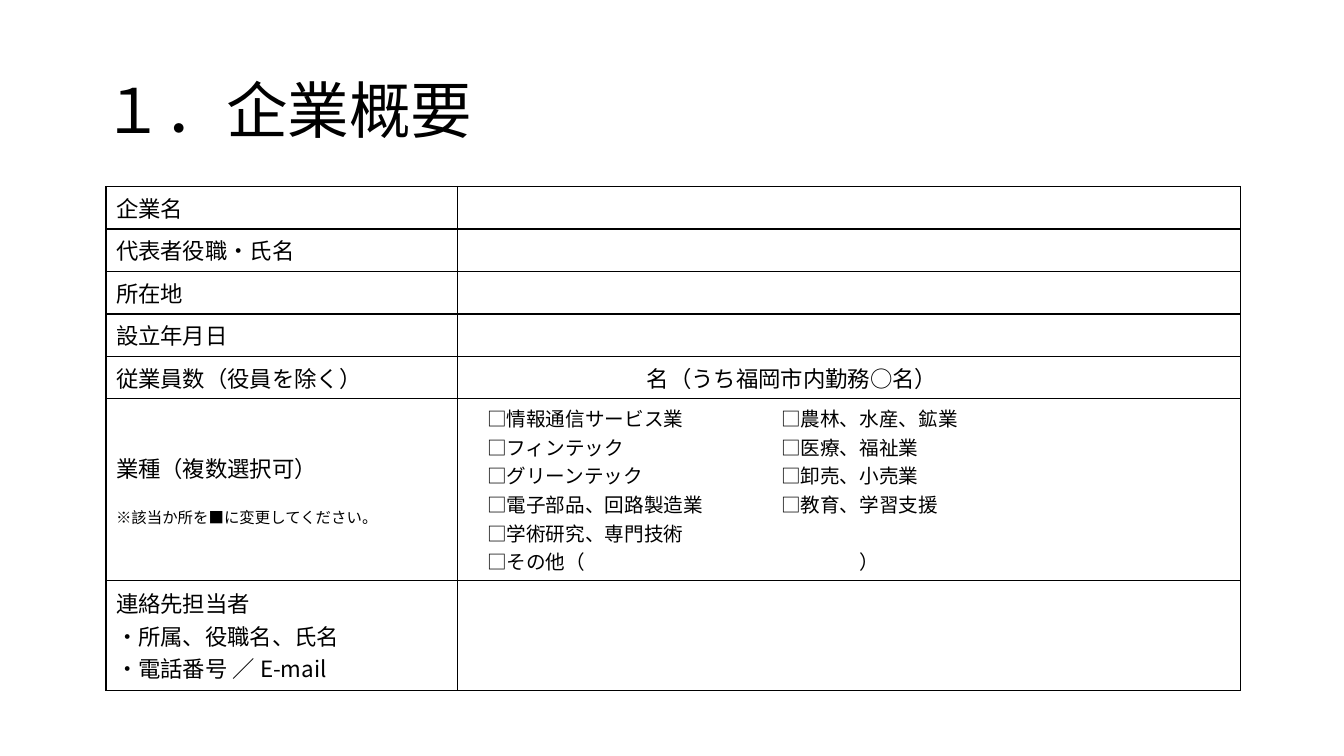
import pptx
import pptx.util
import pptx.dml.color
import pptx.enum.text
import pptx.oxml.ns
import lxml.etree

Cm, Pt = pptx.util.Cm, pptx.util.Pt
RGB = pptx.dml.color.RGBColor
ALIGN, ANCHOR = pptx.enum.text.PP_ALIGN, pptx.enum.text.MSO_ANCHOR
qn = pptx.oxml.ns.qn
sub = lxml.etree.SubElement

COLORS = {"text": "000000", "border": "000000"}
FONT = "Noto Sans CJK JP"


def write(frame, text, size=16, tabs=(), note=None, lead=None):
    """Fill a frame line by line; note is the size of every line after the first."""
    for i, line in enumerate(text.split("\n")):
        par = frame.paragraphs[0] if i == 0 else frame.add_paragraph()
        par.alignment = ALIGN.LEFT
        if lead:
            par.line_spacing = lead
        if note and i:
            par.space_before = Pt(16)
        if tabs:
            stops = sub(par._p.get_or_add_pPr(), qn("a:tabLst"))
            for pos in tabs:
                sub(stops, qn("a:tab"), pos=str(Cm(pos)), algn="l")
        if not line:
            par._p.get_or_add_endParaRPr().set("sz", str(size * 100))
            continue
        run = par.add_run()
        run.text = line
        run.font.size = Pt(note if note and i else size)
        run.font.name = FONT
        run.font.color.rgb = RGB.from_string(COLORS["text"])
        sub(run._r.get_or_add_rPr(), qn("a:ea"), typeface=FONT)


def edge(cell):
    """Draw all four borders of a cell."""
    props = cell._tc.get_or_add_tcPr()
    for side in ("lnL", "lnR", "lnT", "lnB"):
        line = sub(props, qn(f"a:{side}"), w=str(Pt(1)))
        fill = sub(line, qn("a:solidFill"))
        sub(fill, qn("a:srgbClr"), val=COLORS["border"])


deck = pptx.Presentation()
deck.slide_width, deck.slide_height = Cm(33.87), Cm(19.05)
slide = deck.slides.add_slide(deck.slide_layouts[5])

# Title
title = slide.shapes.title
title.left, title.top, title.width, title.height = Cm(2.34), Cm(1.02), Cm(29.21), Cm(3.68)
title.text_frame.vertical_anchor = ANCHOR.MIDDLE
write(title.text_frame, "１．企業概要", size=44, lead=0.9)

# Company table: height, label, label format, entry, entry format
fields = "\n".join([
    "\t□情報通信サービス業\t□農林、水産、鉱業",
    "\t□フィンテック\t□医療、福祉業",
    "\t□グリーンテック\t□卸売、小売業",
    "\t□電子部品、回路製造業\t□教育、学習支援",
    "\t□学術研究、専門技術",
])
other = "\n\t□その他（\t\t）"
rows = [(1.07, name, {}, "", {}) for name in ("企業名", "代表者役職・氏名", "所在地", "設立年月日")]
rows += [
    (1.07, "従業員数（役員を除く）", {}, "\t名（うち福岡市内勤務○名）", {"tabs": [4.52]}),
    (4.57, "業種（複数選択可）\n※該当か所を■に変更してください。", {"note": 11},
     fields + other, {"size": 14, "tabs": [0.49, 7.9, 9.88]}),
    (2.77, "連絡先担当者\n・所属、役職名、氏名\n・電話番号 ／ E-mail", {}, "", {}),
]
widths = [8.86, 19.74]
total = sum(row[0] for row in rows)
table = slide.shapes.add_table(len(rows), 2, Cm(2.67), Cm(4.7), Cm(sum(widths)), Cm(total)).table
table.first_row = table.horz_banding = False
for col, width in zip(table.columns, widths):
    col.width = Cm(width)

for r, (height, label, look, entry, style) in enumerate(rows):
    table.rows[r].height = Cm(height)
    for c, (text, form) in enumerate([(label, look), (entry, style)]):
        cell = table.cell(r, c)
        edge(cell)
        cell.fill.background()
        cell.vertical_anchor = ANCHOR.TOP if text.startswith(fields) else ANCHOR.MIDDLE
        write(cell.text_frame, text, **form)

deck.save("out.pptx")
